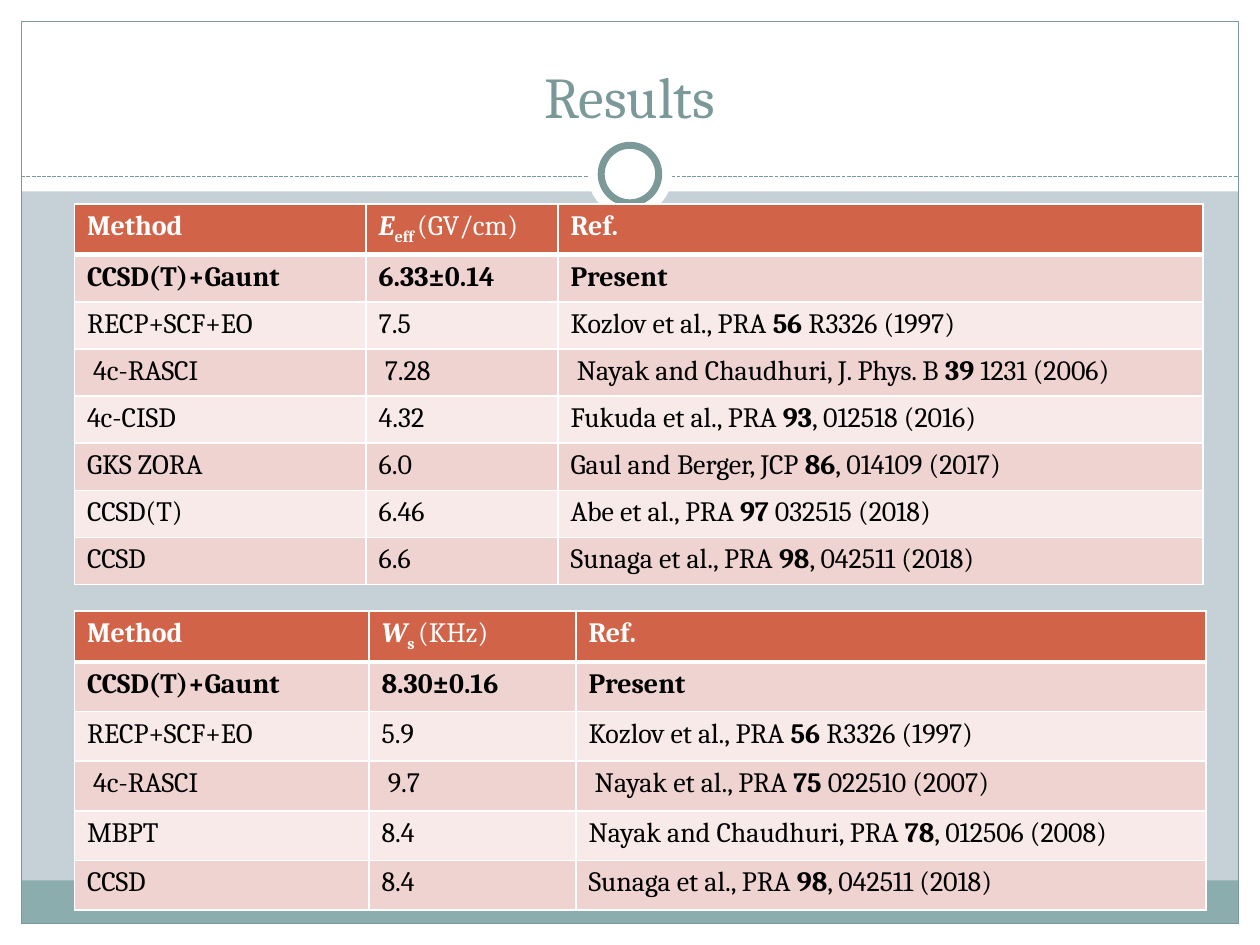
from lxml import etree
from pptx import Presentation
from pptx.dml.color import RGBColor
from pptx.enum.dml import MSO_LINE
from pptx.enum.shapes import MSO_CONNECTOR, MSO_SHAPE
from pptx.enum.text import MSO_ANCHOR, PP_ALIGN
from pptx.oxml import parse_xml
from pptx.oxml.ns import nsdecls, qn
from pptx.util import Cm, Pt

RECT, OVAL = MSO_SHAPE.RECTANGLE, MSO_SHAPE.OVAL
STRAIGHT = MSO_CONNECTOR.STRAIGHT
DASH = MSO_LINE.SQUARE_DOT
BOTTOM = MSO_ANCHOR.BOTTOM
CENTER = PP_ALIGN.CENTER

FONT = "Cambria"
WHITE = RGBColor(0xFF, 0xFF, 0xFF)
BLACK = RGBColor(0x00, 0x00, 0x00)
BACKGROUND = RGBColor(0xC5, 0xD1, 0xD7)
TEAL = RGBColor(0x7C, 0x99, 0x9A)
BAND = RGBColor(0x8C, 0xAD, 0xAE)
HEADER = RGBColor(0xD1, 0x63, 0x49)
ROW_DARK = RGBColor(0xEE, 0xD3, 0xD0)
ROW_LIGHT = RGBColor(0xF7, 0xEA, 0xE9)

WIDTH, HEIGHT, MARGIN = 25.4, 19.05, 0.43

ENERGY_ROWS = [
    ("RECP+SCF+EO", "7.5", ("Kozlov et al., PRA ", "56", " R3326 (1997)")),
    (" 4c-RASCI", " 7.28", (" Nayak and Chaudhuri, J. Phys. B ", "39", " 1231 (2006)")),
    ("4c-CISD", "4.32", ("Fukuda et al., PRA ", "93", ", 012518 (2016)")),
    ("GKS ZORA", "6.0", ("Gaul and Berger, JCP ", "86", ", 014109 (2017)")),
    ("CCSD(T)", "6.46", ("Abe et al., PRA ", "97 ", "032515 (2018)")),
    ("CCSD", "6.6", ("Sunaga et al., PRA ", "98", ", 042511 (2018)")),
]
SCALAR_ROWS = [
    ("RECP+SCF+EO", "5.9", ("Kozlov et al., PRA ", "56", " R3326 (1997)")),
    (" 4c-RASCI", " 9.7", (" Nayak et al., PRA ", "75 ", "022510 (2007)")),
    ("MBPT", "8.4", ("Nayak and Chaudhuri, PRA ", "78", ", 012506 (2008)")),
    ("CCSD", "8.4", ("Sunaga et al., PRA ", "98", ", 042511 (2018)")),
]


def add_shape(slide, kind, x, y, w, h, fill=None, line=None, weight=0.75):
    s = slide.shapes.add_shape(kind, Cm(x), Cm(y), Cm(w), Cm(h))
    s.shadow.inherit = False
    if fill is None:
        s.fill.background()
    else:
        s.fill.solid()
        s.fill.fore_color.rgb = fill
    if line is None:
        s.line.fill.background()
    else:
        s.line.color.rgb = line
        s.line.width = Pt(weight)


def add_divider(slide, y):
    s = slide.shapes.add_connector(STRAIGHT, Cm(MARGIN), Cm(y), Cm(WIDTH - MARGIN), Cm(y))
    s.line.color.rgb = TEAL
    s.line.width = Pt(0.75)
    s.line.dash_style = DASH
    etree.SubElement(s._element.spPr, qn("a:effectLst"))


def add_run(p, text, size, color, bold=False, italic=False, baseline=0):
    r = p.add_run()
    r.text = text
    r.font.name = FONT
    r.font.size = Pt(size)
    r.font.color.rgb = color
    r.font.bold = bold
    r.font.italic = italic
    if baseline:
        r.font._element.set("baseline", str(baseline * 1000))


def add_title(slide, text):
    s = slide.shapes.add_textbox(Cm(0.84), Cm(0.64), Cm(23.72), Cm(2.11))
    tf = s.text_frame
    tf.word_wrap = True
    tf.vertical_anchor = BOTTOM
    p = tf.paragraphs[0]
    p.alignment = CENTER
    add_run(p, text, 33, TEAL)


def style_cell(cell, fill, top, bottom):
    tcPr = cell._tc.get_or_add_tcPr()
    for side, weight in (("L", 1), ("R", 1), ("T", top), ("B", bottom)):
        tcPr.append(parse_xml(
            f'<a:ln{side} {nsdecls("a")} w="{Pt(weight)}"><a:solidFill>'
            f'<a:srgbClr val="{WHITE}"/></a:solidFill></a:ln{side}>'))
    cell.fill.solid()
    cell.fill.fore_color.rgb = fill


def fill_header(cell, symbol, subscript, unit):
    p = cell.text_frame.paragraphs[0]
    add_run(p, symbol, 16, WHITE, bold=True, italic=True)
    add_run(p, subscript, 16, WHITE, bold=True, baseline=-25)
    add_run(p, unit, 16, WHITE)


def fill_reference(cell, source, volume, rest):
    p = cell.text_frame.paragraphs[0]
    add_run(p, source, 16, BLACK)
    add_run(p, volume, 16, BLACK, bold=True)
    add_run(p, rest, 16, BLACK)


def add_results(slide, y, widths, row_height, quantity, present, others):
    rows = [("Method", quantity, "Ref."), ("CCSD(T)+Gaunt", present, "Present"), *others]
    table = slide.shapes.add_table(len(rows), len(widths), Cm(1.5), Cm(y),
                                   Cm(sum(widths)), Cm(row_height * len(rows))).table
    for column, width in zip(table.columns, widths):
        column.width = Cm(width)
    for i, row in enumerate(rows):
        table.rows[i].height = Cm(row_height)
        fill = HEADER if i == 0 else ROW_DARK if i % 2 else ROW_LIGHT
        for j, content in enumerate(row):
            cell = table.cell(i, j)
            style_cell(cell, fill, 3 if i == 1 else 1, 3 if i == 0 else 1)
            if isinstance(content, str):
                color = WHITE if i == 0 else BLACK
                add_run(cell.text_frame.paragraphs[0], content, 16, color, bold=i < 2)
            elif i == 0:
                fill_header(cell, *content)
            else:
                fill_reference(cell, *content)


def add_frame(slide):
    inner = WIDTH - 2 * MARGIN
    add_shape(slide, RECT, 0, HEIGHT - MARGIN, WIDTH, MARGIN, WHITE)
    add_shape(slide, RECT, 0, 0, WIDTH, 3.86, WHITE)
    for x in (0, WIDTH - MARGIN):
        add_shape(slide, RECT, x, 0, MARGIN, HEIGHT, WHITE)
    add_shape(slide, RECT, MARGIN, 17.75, inner, 0.87, BAND)
    add_shape(slide, RECT, MARGIN, MARGIN, inner, HEIGHT - 2 * MARGIN, line=TEAL)
    add_divider(slide, 3.56)
    add_shape(slide, OVAL, 11.85, 2.67, 1.7, 1.7, WHITE)
    add_shape(slide, OVAL, 12.12, 2.93, 1.16, 1.16, WHITE, TEAL, 4)


def main():
    prs = Presentation()
    prs.slide_width, prs.slide_height = Cm(WIDTH), Cm(HEIGHT)
    slide = prs.slides.add_slide(prs.slide_layouts[6])
    slide.background.fill.solid()
    slide.background.fill.fore_color.rgb = BACKGROUND
    add_frame(slide)
    add_title(slide, "Results")
    add_results(slide, 4.11, (5.88, 3.87, 13), 0.95,
                ("E", "eff ", "(GV/cm)"), "6.33±0.14", ENERGY_ROWS)
    add_results(slide, 12.32, (5.94, 4.17, 12.7), 1,
                ("W", "s ", "(KHz)"), "8.30±0.16", SCALAR_ROWS)
    prs.save("out.pptx")


if __name__ == "__main__":
    main()
